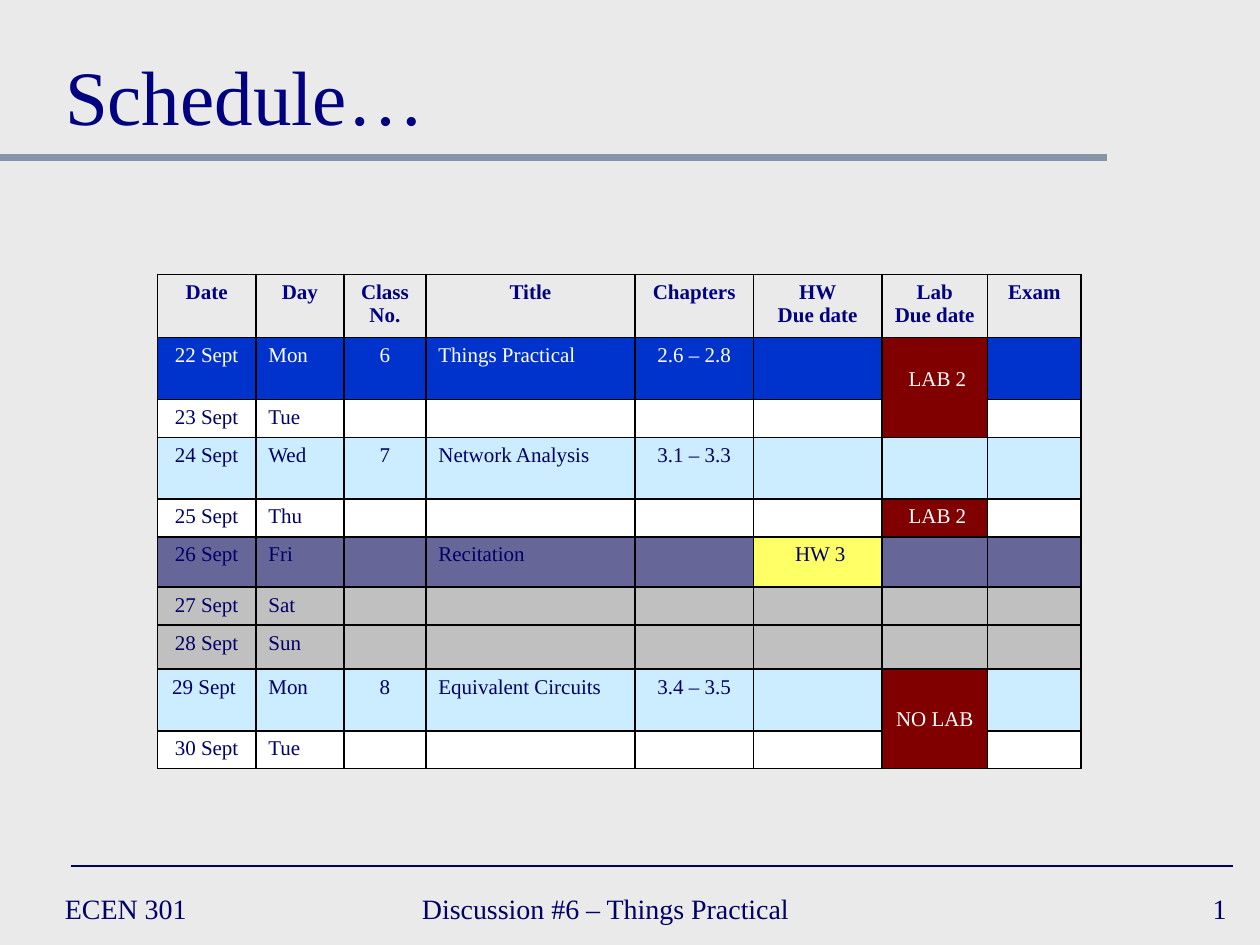
"""Build the course schedule slide with its dated table and footer."""
from dataclasses import dataclass
from typing import NamedTuple, Optional

from lxml import etree
from pptx import Presentation
from pptx import util as u
from pptx.dml.color import RGBColor
from pptx.enum import shapes, text
from pptx.oxml.ns import qn

LEFT, CENTER, RIGHT = text.PP_ALIGN.LEFT, text.PP_ALIGN.CENTER, text.PP_ALIGN.RIGHT
GRID_COLS, GRID_ROWS = 120, 90


class Fill(NamedTuple):
    color: str
    alpha: int = 100


@dataclass(frozen=True)
class Theme:
    font: str = "Times New Roman"
    background: str = "EAEAEA"
    bar: str = "8495A9"
    ink: str = "000066"
    heading: str = "000080"
    light: str = "FFFFFF"
    border: str = "000000"
    title_size: int = 44
    footer_size: int = 16
    table_size: int = 12
    today: Fill = Fill("0033CC")
    open_day: Fill = Fill("FFFFFF")
    next_day: Fill = Fill("FFFFFF", 50)
    lecture: Fill = Fill("CCECFF", 50)
    recitation: Fill = Fill("666699", 50)
    weekend: Fill = Fill("C0C0C0")
    lab: Fill = Fill("800000", 50)
    homework: Fill = Fill("FFFF66", 50)


T = Theme()


class Box(NamedTuple):
    col: float
    row: float
    cols: float
    rows: float


class Rule(NamedTuple):
    start: float
    end: float
    row: float
    color: str
    width: float


class Footer(NamedTuple):
    words: str
    box: Box
    align: text.PP_ALIGN


class Column(NamedTuple):
    head: str
    width: float
    align: text.PP_ALIGN = CENTER


class Day(NamedTuple):
    date: str
    day: str
    height: float
    fill: Fill
    number: str = ""
    title: str = ""
    chapters: str = ""
    color: str = T.ink


class Due(NamedTuple):
    row: int
    col: int
    words: str
    fill: Fill
    color: str = T.light
    span: int = 1
    top: float = 0.05
    anchor: Optional[text.MSO_ANCHOR] = None


RULES = [Rule(0, 105.4, 15, T.bar, 4), Rule(6.75, 117.4, 82.5, T.ink, 1)]
FOOTERS = [
    Footer("ECEN 301", Box(5, 84, 26, 5), LEFT),
    Footer("Discussion #6 – Things Practical", Box(39, 84, 46, 5), LEFT),
    Footer("1", Box(93, 84, 25, 5), RIGHT),
]
COLUMNS = [
    Column("Date", 0.78), Column("Day", 0.7, LEFT), Column("Class\nNo.", 0.65),
    Column("Title", 1.66, LEFT), Column("Chapters", 0.94),
    Column("HW\nDue date", 1.02), Column("Lab\nDue date", 0.84), Column("Exam", 0.74),
]
HEAD_HEIGHT = 0.49
DAYS = [
    Day("22 Sept", "Mon", 0.49, T.today, "6", "Things Practical", "2.6 – 2.8", T.light),
    Day("23 Sept", "Tue", 0.3, T.open_day),
    Day("24 Sept", "Wed", 0.49, T.lecture, "7", "Network Analysis", "3.1 – 3.3"),
    Day("25 Sept", "Thu", 0.3, T.open_day),
    Day("26 Sept", "Fri", 0.4, T.recitation, title="Recitation"),
    Day("27 Sept", "Sat", 0.3, T.weekend),
    Day("28 Sept", "Sun", 0.35, T.weekend),
    Day("29 Sept ", "Mon", 0.49, T.lecture, "8", "Equivalent Circuits", "3.4 – 3.5"),
    Day("30 Sept", "Tue", 0.3, T.next_day),
]
DUES = [
    Due(1, 6, " LAB 2", T.lab, span=2, top=0.24),
    Due(4, 6, " LAB 2", T.lab),
    Due(5, 5, " HW 3", T.homework, T.ink),
    Due(8, 6, "NO LAB", T.lab, span=2, anchor=text.MSO_ANCHOR.MIDDLE),
]


def place(prs, box: Box) -> tuple:
    dx, dy = prs.slide_width / GRID_COLS, prs.slide_height / GRID_ROWS
    return tuple(u.Emu(round(v)) for v in
                 (box.col * dx, box.row * dy, box.cols * dx, box.rows * dy))


def write(tf, words: str, size: float, color: str, align, bold: bool = False) -> None:
    for i, line in enumerate(words.split("\n")):
        p = tf.paragraphs[0] if i == 0 else tf.add_paragraph()
        p.alignment = align
        if not line:
            etree.SubElement(p._p, qn("a:endParaRPr"), sz=str(size * 100))
            continue
        r = p.add_run()
        r.text = line
        r.font.name, r.font.size, r.font.bold = T.font, u.Pt(size), bold
        r.font.color.rgb = RGBColor.from_string(color)


def add_rule(prs, s, rule: Rule) -> None:
    x, y, w, _ = place(prs, Box(rule.start, rule.row, rule.end - rule.start, 0))
    line = s.shapes.add_connector(shapes.MSO_CONNECTOR.STRAIGHT, x, y, x + w, y)
    line.line.color.rgb = RGBColor.from_string(rule.color)
    line.line.width = u.Pt(rule.width)
    etree.SubElement(line._element.spPr, qn("a:effectLst"))


def add_title(prs, s, words: str, box: Box) -> None:
    sp = s.shapes.title
    sp.left, sp.top, sp.width, sp.height = place(prs, box)
    tf = sp.text_frame
    tf.vertical_anchor = text.MSO_ANCHOR.BOTTOM
    tf.auto_size = text.MSO_AUTO_SIZE.NONE
    write(tf, words, T.title_size, T.heading, LEFT)


def add_footer(prs, s, footer: Footer) -> None:
    tf = s.shapes.add_textbox(*place(prs, footer.box)).text_frame
    tf.word_wrap = True
    tf.vertical_anchor = text.MSO_ANCHOR.MIDDLE
    write(tf, footer.words, T.footer_size, T.ink, footer.align)


def paint(cell, fill: Optional[Fill]) -> None:
    if fill is None:
        cell.fill.background()
        return
    cell.fill.solid()
    cell.fill.fore_color.rgb = RGBColor.from_string(fill.color)
    if fill.alpha < 100:
        color = cell._tc.tcPr.find(".//" + qn("a:srgbClr"))
        etree.SubElement(color, qn("a:alpha"), val=str(fill.alpha * 1000))


def outline(cell) -> None:
    tc_pr = cell._tc.get_or_add_tcPr()
    for side in "LRTB":
        ln = etree.SubElement(tc_pr, qn(f"a:ln{side}"), w=str(u.Pt(1)))
        solid = etree.SubElement(ln, qn("a:solidFill"))
        etree.SubElement(solid, qn("a:srgbClr"), val=T.border)


def add_schedule(prs, s, col: float, row: float) -> None:
    heights = [HEAD_HEIGHT] + [d.height for d in DAYS]
    x, y, _, _ = place(prs, Box(col, row, 0, 0))
    tbl = s.shapes.add_table(len(heights), len(COLUMNS), x, y,
                             u.Inches(sum(c.width for c in COLUMNS)),
                             u.Inches(sum(heights))).table
    tbl.first_row = tbl.horz_banding = False
    for i, height in enumerate(heights):
        tbl.rows[i].height = u.Inches(height)
    dues = {(d.row, d.col): d for d in DUES}
    for j, column in enumerate(COLUMNS):
        tbl.columns[j].width = u.Inches(column.width)
        head = tbl.cell(0, j)
        outline(head)
        paint(head, None)
        write(head.text_frame, column.head, T.table_size, T.heading, CENTER, True)
        for i, day in enumerate(DAYS, 1):
            cell, due = tbl.cell(i, j), dues.get((i, j))
            outline(cell)
            paint(cell, due.fill if due else day.fill)
            values = (day.date, day.day, day.number, day.title, day.chapters, "", "", "")
            write(cell.text_frame, due.words if due else values[j], T.table_size,
                  due.color if due else day.color, column.align)
    for due in DUES:
        cell = tbl.cell(due.row, due.col)
        cell.margin_top = u.Inches(due.top)
        cell.vertical_anchor = due.anchor
        if due.span > 1:
            cell.merge(tbl.cell(due.row + due.span - 1, due.col))


def main() -> None:
    prs = Presentation()
    prs.slide_width, prs.slide_height = u.Inches(10), u.Inches(7.5)
    s = prs.slides.add_slide(prs.slide_layouts[5])
    s.background.fill.solid()
    s.background.fill.fore_color.rgb = RGBColor.from_string(T.background)
    for rule in RULES:
        add_rule(prs, s, rule)
    for footer in FOOTERS:
        add_footer(prs, s, footer)
    add_schedule(prs, s, 15, 26.16)
    add_title(prs, s, "Schedule…", Box(5, 2, 111, 12))
    prs.save("out.pptx")


if __name__ == "__main__":
    main()
